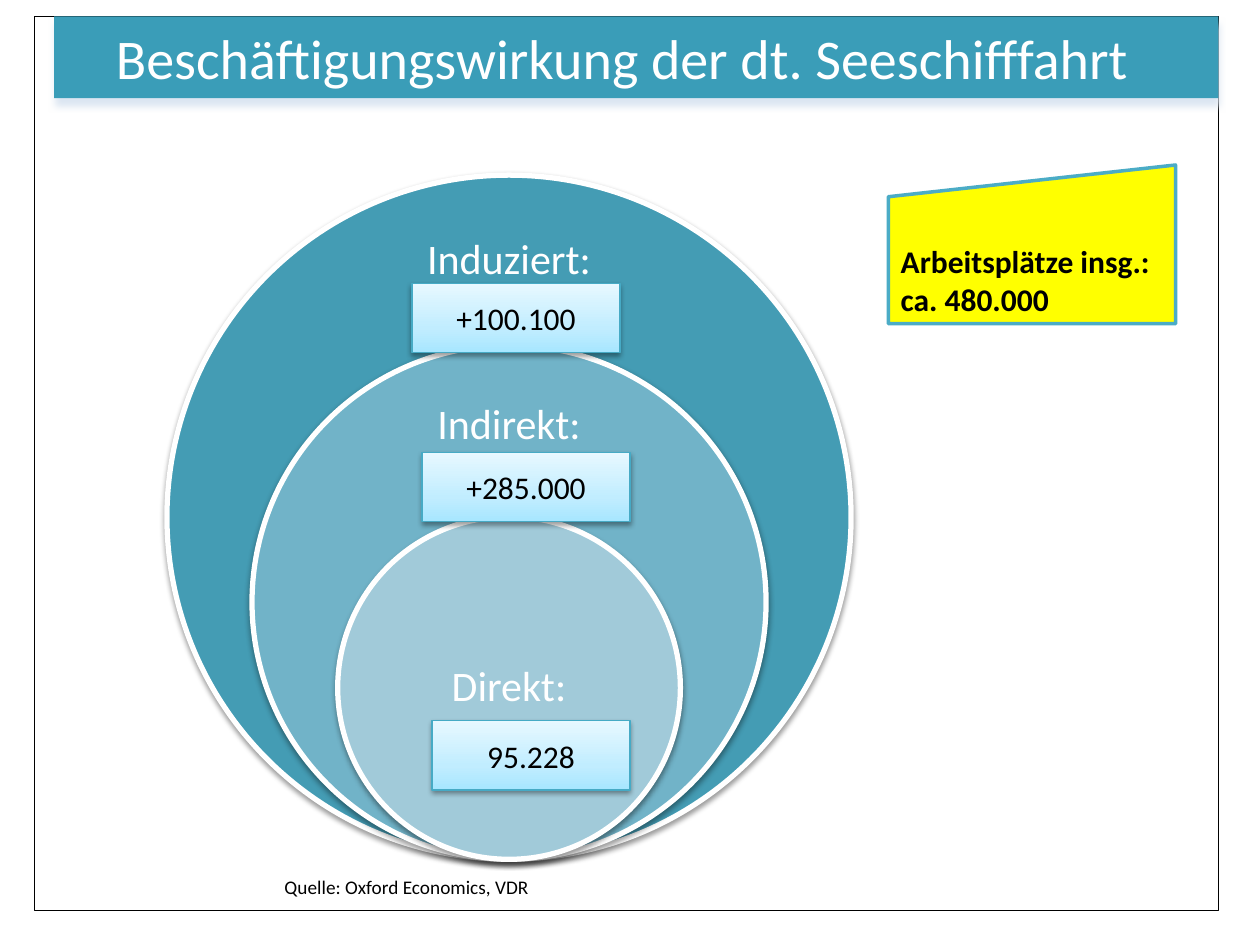
"""Build a slide on the employment effect of German shipping with nested circles."""
from copy import deepcopy

from lxml.etree import SubElement
from pptx import Presentation
from pptx.dml.color import RGBColor
from pptx.enum.shapes import MSO_SHAPE as Shape
from pptx.enum.text import MSO_ANCHOR as Anchor, PP_ALIGN as Align
from pptx.oxml.ns import qn
from pptx.util import Inches, Pt

COLORS = {
    "black": "000000", "white": "FFFFFF", "title": "3A9DB8", "title_shadow": "DCE6F2",
    "induced": "449CB4", "indirect": "71B3C8", "direct": "A1CAD9",
    "box_line": "46AAC5", "box_bottom": "A7E6FF", "box_middle": "C1EDFF", "box_top": "E7F8FF",
    "total": "FFFF00", "total_line": "4BACC6",
}


def add_box(kind, left, top, width, height, fill=None, line=None, line_width=0, shadow=None):
    box = slide.shapes.add_shape(kind, Inches(left), Inches(top), Inches(width), Inches(height))
    box.shadow.inherit = False
    if fill:
        box.fill.solid()
        box.fill.fore_color.rgb = RGBColor.from_string(COLORS[fill])
    else:
        box.fill.background()
    if line:
        box.line.color.rgb = RGBColor.from_string(COLORS[line])
        box.line.width = Pt(line_width)
    else:
        box.line.fill.background()
    if shadow:
        color, opacity, blur, distance = shadow
        effects = box._element.spPr.find(qn("a:effectLst"))
        outer = SubElement(effects, qn("a:outerShdw"), blurRad=str(Pt(blur)), dist=str(Pt(distance)),
                           dir="5400000", rotWithShape="0")
        tone = SubElement(outer, qn("a:srgbClr"), val=COLORS[color])
        SubElement(tone, qn("a:alpha"), val=str(opacity * 1000))
    return box


def write(shape, lines, size, color, align=Align.LEFT, anchor=Anchor.MIDDLE, bold=False):
    frame = shape.text_frame
    frame.word_wrap = True
    frame.vertical_anchor = anchor
    frame.text = "\n".join(lines)
    for paragraph in frame.paragraphs:
        paragraph.alignment = align
        paragraph.font.name = "Calibri"
        paragraph.font.size = Pt(size)
        paragraph.font.bold = bold
        paragraph.font.color.rgb = RGBColor.from_string(COLORS[color])
    return frame


presentation = Presentation()
presentation.slide_width = Inches(10)
presentation.slide_height = Inches(7.5)
slide = presentation.slides.add_slide(presentation.slide_layouts[6])

add_box(Shape.RECTANGLE, 0.27, 0.13, 9.4, 7.1, line="black", line_width=0.5)
title = add_box(Shape.RECTANGLE, 0.43, 0.13, 9.24, 0.65, "title", shadow=("title_shadow", 100, 4, 4))
title_frame = write(title, ["Beschäftigungswirkung der dt. Seeschifffahrt"], 32, "white")
title_frame.margin_left = Inches(0.49)

SOFT_SHADOW = ("black", 38, 3.1, 1.6)
CENTER, BOTTOM = 4.04, 6.82
circles = [
    ("Induziert:", "induced", 5.43, 1.66, 0.82),
    ("Indirekt:", "indirect", 4.08, 3, 0.76),
    ("Direkt:", "direct", 2.72, 4.78, 1.36),
]
for label, color, diameter, label_top, label_height in circles:
    add_box(Shape.OVAL, CENTER - diameter / 2, BOTTOM - diameter, diameter, diameter,
            color, "white", 3, SOFT_SHADOW)
    label_box = slide.shapes.add_textbox(Inches(CENTER - 0.95), Inches(label_top),
                                         Inches(1.9), Inches(label_height))
    label_frame = write(label_box, [label], 24, "white", Align.CENTER)
    label_frame.paragraphs[0].line_spacing = 0.9

gradient = [("box_bottom", 0), ("box_middle", 0.35), ("box_top", 1)]
values = [("95.228", 3.43, 5.72, 1.57), ("+285.000", 3.35, 3.59, 1.65), ("+100.100", 3.27, 2.25, 1.65)]
for value, left, top, width in values:
    value_box = add_box(Shape.RECTANGLE, left, top, width, 0.55,
                        line="box_line", line_width=0.75, shadow=SOFT_SHADOW)
    value_box.fill.gradient()
    value_box.fill.gradient_angle = 90
    stop_list = value_box._element.spPr.find(".//" + qn("a:gsLst"))
    stop_list.insert(1, deepcopy(stop_list[0]))
    for stop, (color, position) in zip(value_box.fill.gradient_stops, gradient):
        stop.color.rgb = RGBColor.from_string(COLORS[color])
        stop.position = position
    write(value_box, [value], 18, "black", Align.CENTER)

source = slide.shapes.add_textbox(Inches(2.16), Inches(6.9), Inches(3.07), Inches(0.29))
write(source, ["Quelle: Oxford Economics, VDR"], 11, "black", anchor=Anchor.TOP)

total = add_box(Shape.FLOWCHART_MANUAL_INPUT, 7.05, 1.31, 2.28, 1.26, "total", "total_line", 2)
write(total, ["Arbeitsplätze insg.:", "ca. 480.000"], 18, "black", anchor=Anchor.BOTTOM, bold=True)

presentation.save("out.pptx")
